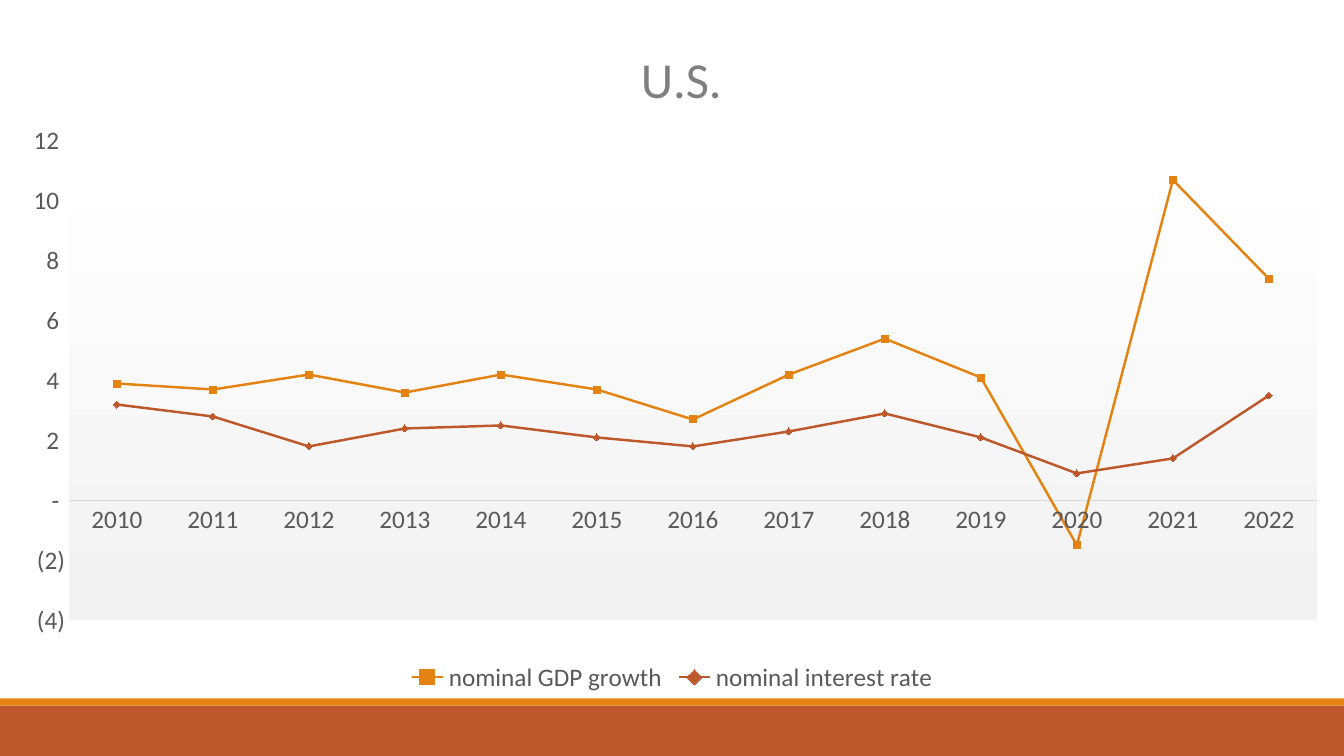
"""Build a slide with a line chart of U.S. GDP growth and interest rates."""
from pptx import Presentation
from pptx.chart.data import CategoryChartData
from pptx.dml.color import RGBColor
from pptx.enum.chart import XL_CHART_TYPE, XL_LEGEND_POSITION, XL_TICK_MARK
from pptx.enum.shapes import MSO_SHAPE
from pptx.oxml import parse_xml
from pptx.oxml.ns import qn
from pptx.util import Inches, Pt

RECT = MSO_SHAPE.RECTANGLE
LINE = XL_CHART_TYPE.LINE
BOTTOM = XL_LEGEND_POSITION.BOTTOM
NO_TICK = XL_TICK_MARK.NONE
ORANGE, RUST, GREY = "E48312", "BD582C", "595959"
NS = ('xmlns:c="http://schemas.openxmlformats.org/drawingml/2006/chart" '
      'xmlns:a="http://schemas.openxmlformats.org/drawingml/2006/main"')


def rgb(value):
    return RGBColor.from_string(value)


def make_layout(**values):
    items = "".join(f'<c:{k} val="{v}"/>' for k, v in values.items())
    return parse_xml(f"<c:layout {NS}><c:manualLayout>{items}</c:manualLayout></c:layout>")


prs = Presentation()
prs.slide_width, prs.slide_height = Inches(13.33), Inches(7.5)
s = prs.slides.add_slide(prs.slide_layouts[6])

for top, height, color in [(7, 0.5, RUST), (6.93, 0.07, ORANGE)]:
    sp = s.shapes.add_shape(RECT, 0, Inches(top), prs.slide_width, Inches(height))
    sp.shadow.inherit = False
    sp.fill.solid()
    sp.fill.fore_color.rgb = rgb(color)
    sp.line.fill.background()

series = [
    ("nominal GDP growth", ORANGE,
     [3.9, 3.7, 4.2, 3.6, 4.2, 3.7, 2.7, 4.2, 5.4, 4.1, -1.5, 10.7, 7.4]),
    ("nominal interest rate", RUST,
     [3.2, 2.8, 1.8, 2.4, 2.5, 2.1, 1.8, 2.3, 2.9, 2.1, 0.9, 1.4, 3.5]),
]
data = CategoryChartData()
data.categories = [str(year) for year in range(2010, 2023)]
for name, color, values in series:
    data.add_series(name, values)
chart = s.shapes.add_chart(LINE, 0, 0, prs.slide_width, Inches(6.92), data).chart
chart.font.name = "Calibri"
chart.font.size = Pt(18)
chart.font.color.rgb = rgb(GREY)

plot = chart.plots[0]
plot.vary_by_categories = False
for ser, (name, color, values) in zip(plot.series, series):
    ser.smooth = False
    ser.format.line.width = Pt(1.75)
    ser.format.line.color.rgb = rgb(color)
    ser.marker.style = None

chart.has_title = True
title = chart.chart_title
p = title.text_frame.paragraphs[0]
r = p.add_run()
r.text = "U.S."
title_format = {"name": "Calibri", "size": Pt(36), "bold": False}
for key, value in title_format.items():
    setattr(r.font, key, value)
r.font.color.rgb = rgb("7F7F7F")

chart.has_legend = True
chart.legend.position = BOTTOM
chart.legend.include_in_layout = False

axis_format = {"major_tick_mark": NO_TICK, "minor_tick_mark": NO_TICK,
               "has_major_gridlines": False}
for axis in (chart.category_axis, chart.value_axis):
    for key, value in axis_format.items():
        setattr(axis, key, value)
    font = axis.tick_labels.font
    font.name, font.size = "Calibri", Pt(18)
    font.color.rgb = rgb(GREY)
chart.category_axis.format.line.color.rgb = rgb("D9D9D9")
chart.category_axis.format.line.width = Pt(0.75)

axis = chart.value_axis
axis.minimum_scale, axis.maximum_scale, axis.major_unit = -4, 12, 2
axis.format.line.fill.background()
axis.tick_labels.number_format = r'_(* #,##0_);_(* \(#,##0\);_(* "-"_);_(@_)'
axis.tick_labels.number_format_is_linked = False

space = chart.element
body = space.find(qn("c:chart"))
area = body.find(qn("c:plotArea"))
heading = body.find(qn("c:title"))
for parent in (area, heading):
    for old in parent.findall(qn("c:layout")):
        parent.remove(old)
area.insert(0, make_layout(layoutTarget="inner", xMode="edge", yMode="edge",
                           x=0.0513, y=0.2022, w=0.9286, h=0.687))
heading.find(qn("c:tx")).addnext(make_layout(xMode="edge", yMode="edge", x=0.47, y=0.05))

area.append(parse_xml(
    f'<c:spPr {NS}><a:gradFill><a:gsLst>'
    '<a:gs pos="0"><a:srgbClr val="FFFFFF"/></a:gs>'
    '<a:gs pos="100000"><a:srgbClr val="F2F2F2"/></a:gs>'
    '</a:gsLst><a:lin ang="5400000" scaled="0"/></a:gradFill></c:spPr>'))
body.addnext(parse_xml(
    f'<c:spPr {NS}><a:solidFill><a:srgbClr val="FFFFFF"/></a:solidFill>'
    '<a:ln><a:noFill/></a:ln></c:spPr>'))

prs.save("out.pptx")
